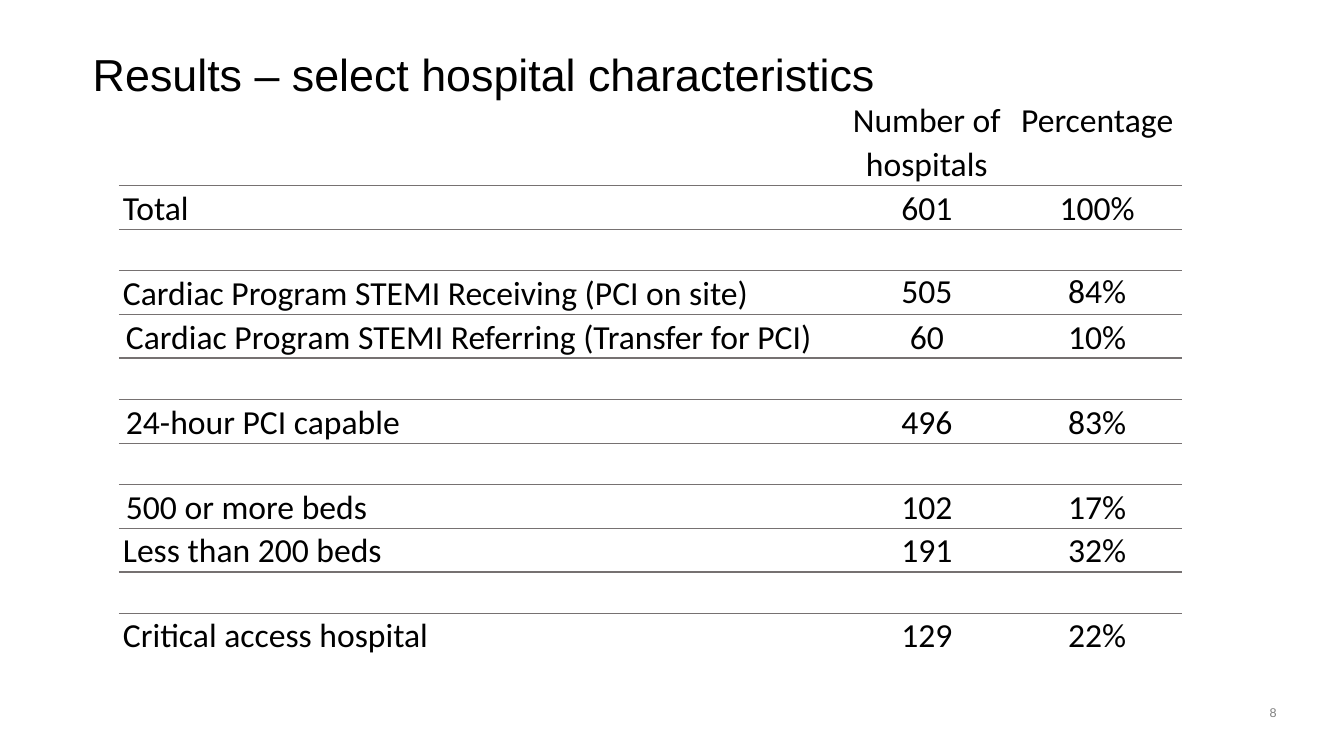
"""Build the slide of select hospital characteristics."""
from dataclasses import dataclass

from lxml import etree
from pptx import Presentation
from pptx import util as u
from pptx.dml.color import RGBColor
from pptx.enum import text
from pptx.oxml import ns

CENTER, LEFT = text.PP_ALIGN.CENTER, text.PP_ALIGN.LEFT
TOP, MIDDLE = text.MSO_ANCHOR.TOP, text.MSO_ANCHOR.MIDDLE
GRID_COLUMNS = 160
SLIDE_WIDTH, SLIDE_HEIGHT = u.Inches(13.33), u.Inches(7.5)
NO_GRID_STYLE = "{2D5ABB26-0587-4C30-8999-92F81FD0307C}"


@dataclass(frozen=True)
class Theme:
    """Hold the colours, fonts and type sizes."""
    ink: str = "000000"
    rule: str = "767171"
    muted: str = "808080"
    heading_font: str = "Arial"
    table_font: str = "Calibri"
    title_size: int = 32
    table_size: int = 24
    number_size: int = 9
    rule_width: int = 1


THEME = Theme()


@dataclass(frozen=True)
class Row:
    """Describe one table row; a row without cells is a gap."""
    cells: tuple = ("", "", "")
    height: float = 5.22
    inset: float = 0.48
    anchor: object = MIDDLE
    spacing: float = 1.07


GAP = Row(height=4.91, inset=0)
WIDE = {"inset": 0.84, "anchor": TOP}
ROWS = (
    Row(("", "Number of hospitals", "Percentage"), height=10.44, anchor=TOP),
    Row(("Total", "601", "100%")),
    GAP,
    Row(("Cardiac Program STEMI Receiving (PCI on site)", "505", "84%"), spacing=1.0),
    Row(("Cardiac Program STEMI Referring (Transfer for PCI)", "60", "10%"), **WIDE),
    GAP,
    Row(("24-hour PCI capable", "496", "83%"), **WIDE),
    GAP,
    Row(("500 or more beds", "102", "17%"), **WIDE),
    Row(("Less than 200 beds", "191", "32%")),
    GAP,
    Row(("Critical access hospital", "129", "22%")),
)
COLUMN_WIDTHS = (86.04, 20.28, 20.28)


def grid(cells):
    """Convert grid cells to a slide length."""
    return u.Emu(round(cells * SLIDE_WIDTH / GRID_COLUMNS))


def write(frame, wording, *, font, size, color=THEME.ink, align=LEFT, spacing=1.0):
    """Write formatted text into a text frame."""
    frame.word_wrap = True
    paragraph = frame.paragraphs[0]
    paragraph.alignment = align
    paragraph.line_spacing = spacing
    run = paragraph.add_run()
    run.text = wording
    run.font.name = font
    run.font.size = u.Pt(size)
    run.font.color.rgb = RGBColor.from_string(color)


def add_label(slide, box, wording, *, inset=None, anchor=TOP, **style):
    """Add a text box at a grid position."""
    frame = slide.shapes.add_textbox(*map(grid, box)).text_frame
    frame.vertical_anchor = anchor
    if inset is not None:
        frame.margin_left = frame.margin_right = grid(inset)
        frame.margin_top = frame.margin_bottom = grid(inset)
    write(frame, wording, **style)


def add_bottom_rule(cell):
    """Draw a thin line under a table cell."""
    line = etree.Element(ns.qn("a:lnB"), w=str(u.Pt(THEME.rule_width)))
    fill = etree.SubElement(line, ns.qn("a:solidFill"))
    etree.SubElement(fill, ns.qn("a:srgbClr"), val=THEME.rule)
    cell._tc.get_or_add_tcPr().insert(0, line)


def fill_cell(cell, wording, row, column):
    """Set the margins and wording of a table cell."""
    cell.fill.background()
    cell.margin_left = cell.margin_right = grid(row.inset)
    cell.margin_top = cell.margin_bottom = 0
    cell.vertical_anchor = row.anchor if column else TOP
    if wording:
        write(cell.text_frame, wording, font=THEME.table_font, size=THEME.table_size,
              align=CENTER if column else LEFT,
              spacing=row.spacing if column else 1.07)


def add_hospital_table(slide, left, top):
    """Add the ruled table of hospital counts."""
    width, height = sum(COLUMN_WIDTHS), sum(row.height for row in ROWS)
    frame = slide.shapes.add_table(len(ROWS), len(COLUMN_WIDTHS),
                                   *map(grid, (left, top, width, height)))
    table = frame.table
    table.first_row = table.horz_banding = False
    table._tbl.tblPr.find(ns.qn("a:tableStyleId")).text = NO_GRID_STYLE
    for column, column_width in zip(table.columns, COLUMN_WIDTHS):
        column.width = grid(column_width)
    for index, row in enumerate(ROWS):
        table.rows[index].height = grid(row.height)
        for column, wording in enumerate(row.cells):
            cell = table.cell(index, column)
            fill_cell(cell, wording, row, column)
            if row is not ROWS[-1]:
                add_bottom_rule(cell)


def main():
    """Build and save the slide."""
    presentation = Presentation()
    presentation.slide_width, presentation.slide_height = SLIDE_WIDTH, SLIDE_HEIGHT
    slide = presentation.slides.add_slide(presentation.slide_layouts[6])
    add_label(slide, (11.04, 4.8, 138, 8.64), "Results – select hospital characteristics",
              inset=0, anchor=MIDDLE, font=THEME.heading_font, size=THEME.title_size,
              spacing=0.9)
    add_hospital_table(slide, 14.16, 11.64)
    add_label(slide, (149.04, 83.4, 5.04, 3.12), "8", font=THEME.heading_font,
              size=THEME.number_size, color=THEME.muted, align=CENTER)
    presentation.save("out.pptx")


if __name__ == "__main__":
    main()
